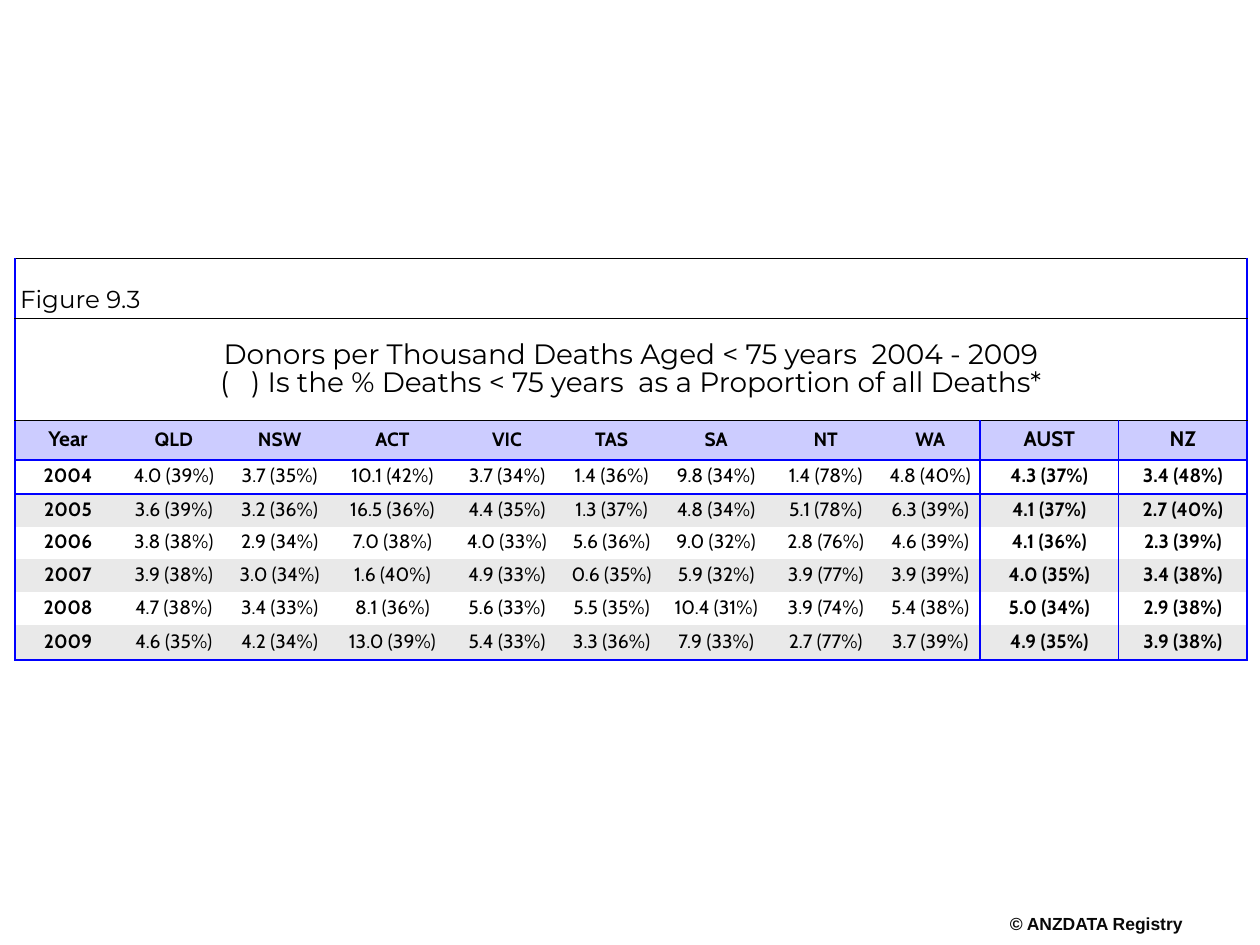
from lxml.etree import SubElement
from pptx import Presentation
from pptx.dml.color import RGBColor
from pptx.enum.text import MSO_ANCHOR, PP_ALIGN
from pptx.oxml.ns import qn
from pptx.util import Inches, Pt

WIDE, HIGH = 10, 7.5
COLS = [0.84, 0.84, 0.84, 0.95, 0.87, 0.79, 0.87, 0.87, 0.79, 1.1, 1.02]
ROWS = [0.48, 0.81, 0.31, 0.27, 0.26, 0.26, 0.26, 0.26, 0.28]
PLAIN = "{2D5ABB26-0587-4C30-8999-92F81FD0307C}"
BLUE, BLACK, LILAC, GREY = "0000FF", "000000", "CCCCFF", "E9E9E9"
TITLE = [
    "Donors per Thousand Deaths Aged < 75 years  2004 - 2009",
    "(   ) Is the % Deaths < 75 years  as a Proportion of all Deaths*",
]
HEADS = "Year QLD NSW ACT VIC TAS SA NT WA AUST NZ".split()
DATA = """
2004|4.0 (39%)|3.7 (35%)|10.1 (42%)|3.7 (34%)|1.4 (36%)|9.8 (34%)|1.4 (78%)|4.8 (40%)|4.3 (37%)|3.4 (48%)
2005|3.6 (39%)|3.2 (36%)|16.5 (36%)|4.4 (35%)|1.3 (37%)|4.8 (34%)|5.1 (78%)|6.3 (39%)|4.1 (37%)|2.7 (40%)
2006|3.8 (38%)|2.9 (34%)|7.0 (38%)|4.0 (33%)|5.6 (36%)|9.0 (32%)|2.8 (76%)|4.6 (39%)|4.1 (36%)|2.3 (39%)
2007|3.9 (38%)|3.0 (34%)|1.6 (40%)|4.9 (33%)|0.6 (35%)|5.9 (32%)|3.9 (77%)|3.9 (39%)|4.0 (35%)|3.4 (38%)
2008|4.7 (38%)|3.4 (33%)|8.1 (36%)|5.6 (33%)|5.5 (35%)|10.4 (31%)|3.9 (74%)|5.4 (38%)|5.0 (34%)|2.9 (38%)
2009|4.6 (35%)|4.2 (34%)|13.0 (39%)|5.4 (33%)|3.3 (36%)|7.9 (33%)|2.7 (77%)|3.7 (39%)|4.9 (35%)|3.9 (38%)
"""


def paint(hue):
    return RGBColor.from_string(hue)


def write(frame, lines, face, size, bold=False, align=PP_ALIGN.CENTER, hue=BLACK):
    frame.text = "\n".join(lines)
    for para in frame.paragraphs:
        para.alignment = align
        para.line_spacing = 0.85
        font = para.font
        font.name, font.size, font.bold = face, Pt(size), bold
        font.color.rgb = paint(hue)


def inset(item, left, top, right, base):
    item.margin_left, item.margin_top = Inches(left), Inches(top)
    item.margin_right, item.margin_bottom = Inches(right), Inches(base)


def edge(cell, sides, hue=BLUE, width=1):
    """Draw borders on the sides named by L, R, T and B, in that order."""
    props = cell._tc.get_or_add_tcPr()
    for side in sides:
        line = SubElement(props, qn(f"a:ln{side}"), w=str(Pt(width)))
        fill = SubElement(line, qn("a:solidFill"))
        SubElement(fill, qn("a:srgbClr"), val=hue)


def band(table, row, lines, size, anchor, right, align):
    """Fill a row that is one cell across the whole table."""
    last = len(COLS) - 1
    cell = table.cell(row, 0)
    cell.merge(table.cell(row, last))
    for col in range(len(COLS)):
        part = table.cell(row, col)
        edge(part, ("L" if col == 0 else "") + ("R" if col in (0, last) else ""))
        edge(part, "TB", BLACK, 0.5)
    cell.vertical_anchor = anchor
    inset(cell, 0.04, 0.04, right, 0.04)
    write(cell.text_frame, lines, "Montserrat", size, align=align)


def entry(table, row, col, text):
    cell = table.cell(row, col)
    head, total = row == 2, col >= 9
    edge(cell, ("L" if col == 0 or total else "") + ("R" if col >= 8 else ""))
    if head:
        edge(cell, "T", BLACK, 0.5)
    elif row == 3:
        edge(cell, "T")
    if head or row == len(ROWS) - 1:
        edge(cell, "B")
    if head or row % 2 == 0:
        cell.fill.solid()
        cell.fill.fore_color.rgb = paint(LILAC if head else GREY)
    else:
        cell.fill.background()
    cell.vertical_anchor = MSO_ANCHOR.MIDDLE
    inset(cell, 0.04, 0.02, 0.04, 0.02)
    size = 12 if head and (col == 0 or total) else 11
    write(cell.text_frame, [text], "Cabin", size, head or col == 0 or total)


def grid(slide):
    frame = slide.shapes.add_table(
        len(ROWS), len(COLS), Inches(0.12), Inches(2.05),
        Inches(sum(COLS)), Inches(sum(ROWS)))
    table = frame.table
    table._tbl.tblPr.find(qn("a:tableStyleId")).text = PLAIN
    for col, width in zip(table.columns, COLS):
        col.width = Inches(width)
    for row, height in zip(table.rows, ROWS):
        row.height = Inches(height)
    band(table, 0, ["Figure 9.3"], 14, MSO_ANCHOR.BOTTOM, 0.08, PP_ALIGN.LEFT)
    band(table, 1, TITLE, 16, MSO_ANCHOR.MIDDLE, 0.04, PP_ALIGN.CENTER)
    body = [line.split("|") for line in DATA.strip().splitlines()]
    for row, texts in enumerate([HEADS] + body, 2):
        for col, text in enumerate(texts):
            entry(table, row, col, text)


def credit(slide):
    box = slide.shapes.add_textbox(
        Inches(0.8 * WIDE), Inches(0.97 * HIGH), Inches(0.14 * WIDE), Inches(0.17))
    frame = box.text_frame
    frame.word_wrap = False
    inset(frame, 0, 0, 0, 0)
    write(frame, ["© ANZDATA Registry"], "Arial", 10, True, hue="080808")


def main():
    deck = Presentation()
    deck.slide_width, deck.slide_height = Inches(WIDE), Inches(HIGH)
    slide = deck.slides.add_slide(deck.slide_layouts[6])
    credit(slide)
    grid(slide)
    deck.save("out.pptx")


if __name__ == "__main__":
    main()
